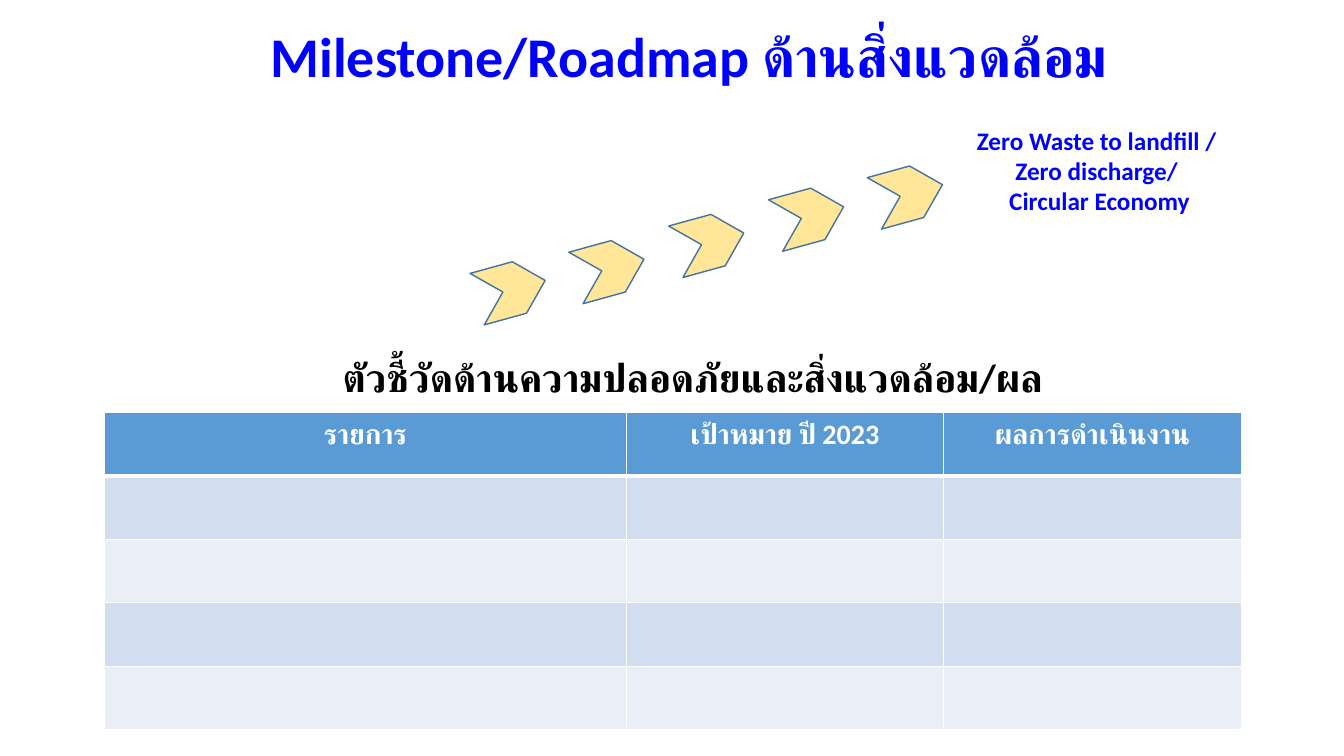
from lxml.etree import SubElement as Sub
from pptx import Presentation
from pptx.dml.color import RGBColor as RGB
from pptx.enum.shapes import MSO_SHAPE as Shape
from pptx.enum.text import MSO_ANCHOR as Anchor, PP_ALIGN as Align
from pptx.oxml.ns import qn
from pptx.util import Pt

PX = 9144  # 100 px to the inch
FONT = "Calibri"
COLORS = {
    "blue": "0000FF", "black": "000000", "white": "FFFFFF",
    "head": "5B9BD5", "odd": "D2DEEF", "even": "EAEFF7",
    "gold": "FFE699", "edge": "43739E",
}


def color(name):
    return RGB.from_string(COLORS[name])


def scale(*nums):
    return [n * PX for n in nums]


def write(para, text, size, ink):
    para.alignment = Align.CENTER
    run = para.add_run()
    run.text = text
    font = run.font
    font.name, font.size, font.bold = FONT, Pt(size), True
    font.color.rgb = color(ink)
    Sub(run._r.get_or_add_rPr(), qn("a:cs"), typeface=FONT)


def add_text(slide, box, lines, size, ink, anchor=Anchor.TOP, space=None):
    frame = slide.shapes.add_textbox(*scale(*box)).text_frame
    frame.word_wrap = True
    frame.vertical_anchor = anchor
    for i, line in enumerate(lines):
        para = frame.add_paragraph() if i else frame.paragraphs[0]
        para.line_spacing = space
        write(para, line, size, ink)
    return frame


def add_title(slide, box):
    text = "Milestone/Roadmap ด้านสิ่งแวดล้อม "
    frame = add_text(slide, box, [text], 40, "blue", space=0.9)
    para = frame.paragraphs[0]
    para.space_before = Pt(5)
    para._p.get_or_add_pPr().set("marL", str(44 * PX))


def add_path(slide, box):
    """Draw the rising row of chevrons, from the top right down."""
    left, top, width, height = box
    wide, high = 70, 53
    drops = [0, 22, 48, 74, 95]
    step = (width - wide) / (len(drops) - 1)
    for i, drop in enumerate(drops):
        x = round(left + width - wide - i * step)
        mark = slide.shapes.add_shape(
            Shape.CHEVRON, *scale(x, top + drop, wide, high))
        mark.rotation = 344.6
        mark.shadow.inherit = False
        mark.fill.solid()
        mark.fill.fore_color.rgb = color("gold")
        mark.line.color.rgb = color("edge")
        mark.line.width = Pt(1)


def style_cell(cell, fill, base):
    """Set white borders, the lower one base points wide, and the fill."""
    props = cell._tc.get_or_add_tcPr()
    for side, width in (("L", 1), ("R", 1), ("T", 1), ("B", base)):
        line = Sub(props, qn(f"a:ln{side}"), w=str(Pt(width)))
        solid = Sub(line, qn("a:solidFill"))
        Sub(solid, qn("a:srgbClr"), val=COLORS["white"])
    cell.fill.solid()
    cell.fill.fore_color.rgb = color(fill)


def add_scores(slide, box):
    heads = ["รายการ", "เป้าหมาย ปี 2023", "ผลการดำเนินงาน"]
    fills = ["head", "odd", "even", "odd", "even"]
    table = slide.shapes.add_table(
        len(fills), len(heads), *scale(*box)).table
    for col, width in zip(table.columns, scale(517, 315, 295)):
        col.width = width
    for row, fill in zip(table.rows, fills):
        for cell in row.cells:
            style_cell(cell, fill, 3 if fill == "head" else 1)
    for cell, head in zip(table.rows[0].cells, heads):
        write(cell.text_frame.paragraphs[0], head, 20, "white")


def build_roadmap(deck):
    slide = deck.slides.add_slide(deck.slide_layouts[6])
    add_title(slide, (182, 24, 971, 60))
    add_text(slide, (284, 334, 806, 86),
             ["ตัวชี้วัดด้านความปลอดภัยและสิ่งแวดล้อม/ผล"],
             28, "black", Anchor.MIDDLE, 0.9)
    add_scores(slide, (104, 409, 1127, 315))
    goals = ["Zero Waste to landfill / ", "Zero discharge/ ",
             "Circular Economy"]
    add_text(slide, (959, 119, 263, 101), goals, 18, "blue")
    add_path(slide, (472, 166, 464, 148))


def main():
    deck = Presentation()
    deck.slide_width, deck.slide_height = scale(1333, 750)
    build_roadmap(deck)
    deck.save("out.pptx")


if __name__ == "__main__":
    main()
